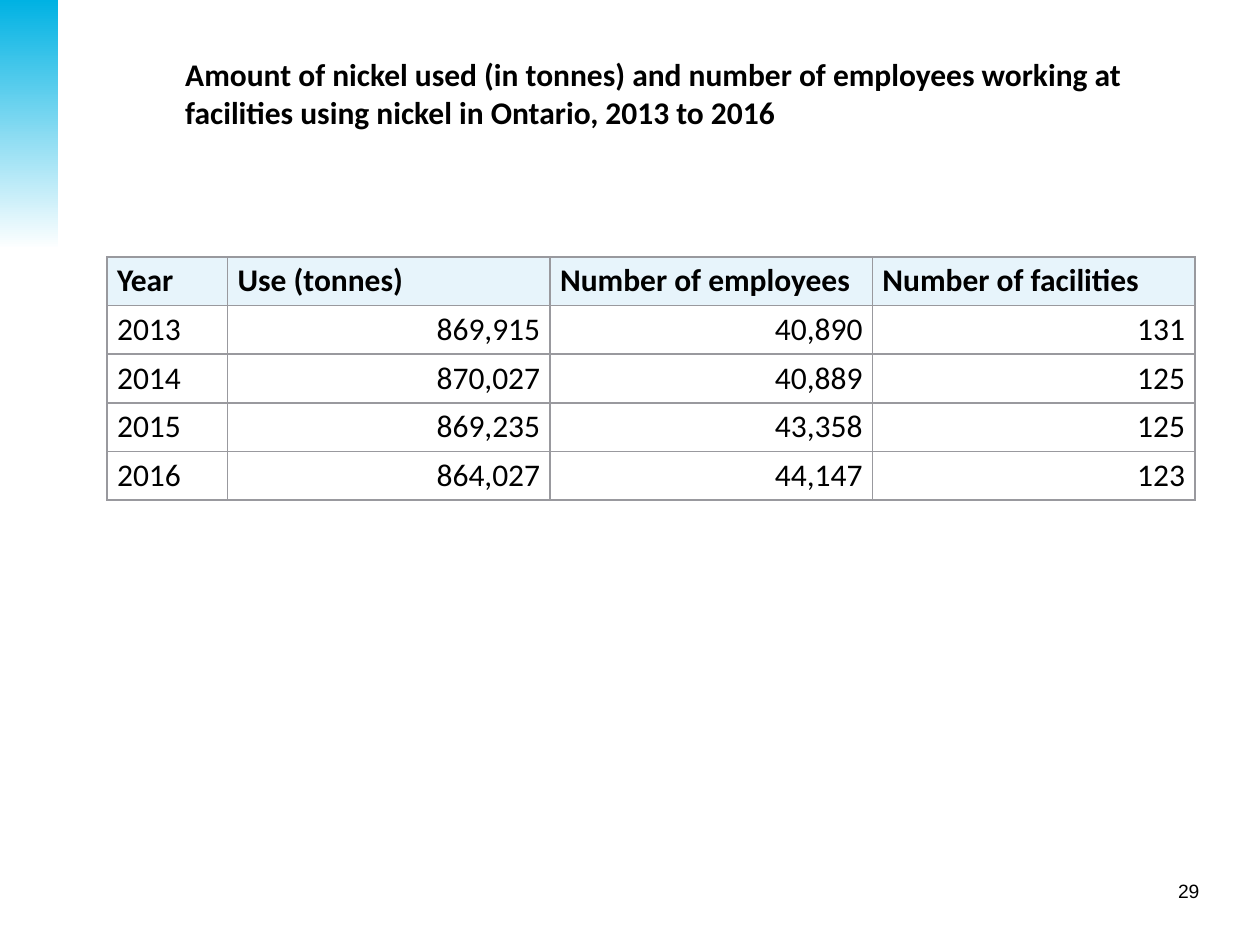
import pptx
import pptx.dml.color
import pptx.enum.shapes
import pptx.enum.text
import pptx.oxml
import pptx.oxml.ns
import pptx.util
from pptx.util import Cm

ALIGN = pptx.enum.text.PP_ALIGN
ROWS = [
    ("Year", "Use (tonnes)", "Number of employees", "Number of facilities"),
    ("2013", "869,915", "40,890", "131"),
    ("2014", "870,027", "40,889", "125"),
    ("2015", "869,235", "43,358", "125"),
    ("2016", "864,027", "44,147", "123"),
]
WIDTHS = [2.43, 6.5, 6.5, 6.5]
HEIGHT = 0.98


def color(code):
    return pptx.dml.color.RGBColor.from_string(code)


def write(frame, text, size, face, bold=False, align=ALIGN.LEFT):
    frame.text = text
    frame.word_wrap = True
    para = frame.paragraphs[0]
    para.alignment = align
    font = para.font
    font.size = pptx.util.Pt(size)
    font.name = face
    font.bold = bold
    font.color.rgb = color("000000")


def add_bar(slide):
    bar = slide.shapes.add_shape(
        pptx.enum.shapes.MSO_SHAPE.RECTANGLE, 0, 0, Cm(1.17), Cm(5.03))
    bar.shadow.inherit = False
    bar.line.fill.background()
    bar.fill.gradient()
    bar.fill.gradient_angle = 270
    for stop, code in zip(bar.fill.gradient_stops, ("00B2E3", "FFFFFF")):
        stop.color.rgb = color(code)


def set_title(slide, text):
    title = slide.shapes.title
    title.left, title.top = Cm(3.48), Cm(0.99)
    title.width, title.height = Cm(21.51), Cm(2.31)
    write(title.text_frame, text, 18, "Calibri", True)
    title.text_frame.vertical_anchor = pptx.enum.text.MSO_ANCHOR.TOP


def add_number(slide, text):
    box = slide.shapes.add_textbox(Cm(21.46), Cm(17.6), Cm(2.97), Cm(0.74))
    write(box.text_frame, text, 11, "Arial", align=ALIGN.RIGHT)


def set_border(cell, code):
    props = cell._tc.get_or_add_tcPr()
    for side in "LRTB":
        props.append(pptx.oxml.parse_xml(
            f'<a:ln{side} {pptx.oxml.ns.nsdecls("a")} w="12700"><a:solidFill>'
            f'<a:srgbClr val="{code}"/></a:solidFill></a:ln{side}>'))


def add_grid(slide):
    table = slide.shapes.add_table(
        len(ROWS), len(WIDTHS), Cm(2.16), Cm(5.18),
        Cm(sum(WIDTHS)), Cm(HEIGHT * len(ROWS))).table
    table.horz_banding = False
    for col, width in zip(table.columns, WIDTHS):
        col.width = Cm(width)
    for r, row in enumerate(ROWS):
        table.rows[r].height = Cm(HEIGHT)
        for c, text in enumerate(row):
            cell = table.cell(r, c)
            head = r == 0
            align = ALIGN.LEFT if head or c == 0 else ALIGN.RIGHT
            write(cell.text_frame, text, 18, "Calibri", head, align)
            cell.margin_left = cell.margin_right = Cm(0.2)
            cell.margin_top = cell.margin_bottom = Cm(0.1)
            set_border(cell, "99999E")
            if head:
                cell.fill.solid()
                cell.fill.fore_color.rgb = color("E7F4FB")
            else:
                cell.fill.background()


def main():
    deck = pptx.Presentation()
    deck.slide_width, deck.slide_height = Cm(25.4), Cm(19.05)
    slide = deck.slides.add_slide(deck.slide_layouts[5])
    add_bar(slide)
    set_title(slide, "Amount of nickel used (in tonnes) and number of employees "
                     "working at facilities using nickel in Ontario, 2013 to 2016")
    add_grid(slide)
    add_number(slide, "29")
    deck.save("out.pptx")


if __name__ == "__main__":
    main()
